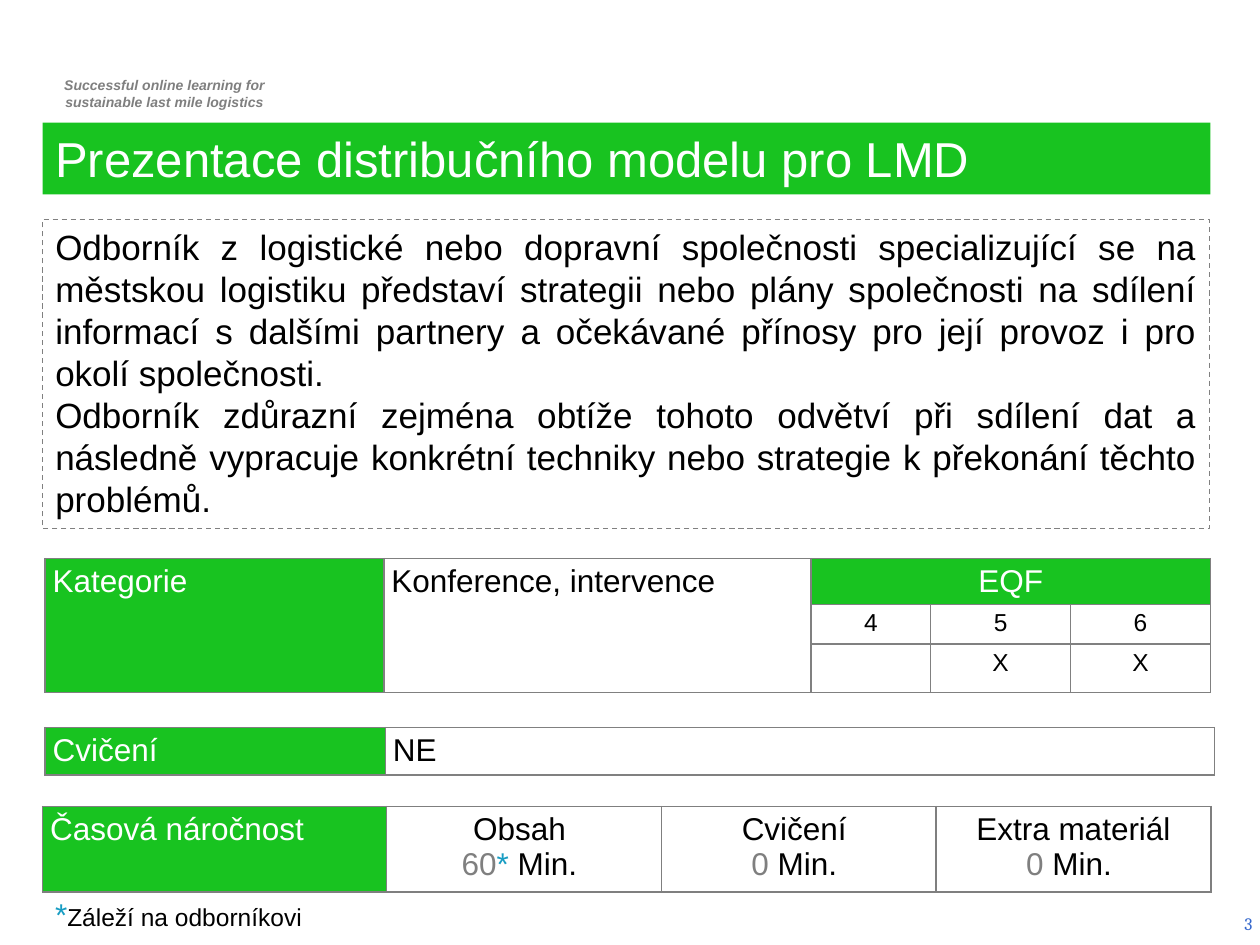
from lxml import etree
from pptx import Presentation, util as u
from pptx.dml.color import RGBColor
from pptx.enum import dml, text
from pptx.oxml import ns

HUES = {"green": "18C320", "white": "FFFFFF", "black": "000000",
        "gray": "7F7F7F", "edge": "808080", "cyan": "189DC3", "blue": "3366CC"}
ALIGN = {"l": text.PP_ALIGN.LEFT, "c": text.PP_ALIGN.CENTER,
         "r": text.PP_ALIGN.RIGHT, "j": text.PP_ALIGN.JUSTIFY}


def hue(name):
    return RGBColor.from_string(HUES[name])


def put(obj, form):
    for key, val in form.items():
        setattr(obj, key, val)


def place(obj, box):
    put(obj, dict(zip(("left", "top", "width", "height"), map(u.Cm, box))))


class Deck:
    face = "Arial"

    def __init__(self):
        self.prs = Presentation()
        put(self.prs, {"slide_width": u.Cm(25.4), "slide_height": u.Cm(19.05)})
        self.page = self.prs.slides.add_slide(self.prs.slide_layouts[1])

    def say(self, frame, paras, align="l", size=18, color="black", **font):
        for i, runs in enumerate(paras):
            para = frame.paragraphs[0] if i == 0 else frame.add_paragraph()
            put(para, {"alignment": ALIGN[align], "space_before": u.Pt(0)})
            for part in [runs] if isinstance(runs, str) else runs:
                words, tint, pts = ((part, color, size) if isinstance(part, str)
                                    else (*part, size)[:3])
                run = para.add_run()
                run.text = words
                put(run.font, {"name": self.face, "size": u.Pt(pts), **font})
                run.font.color.rgb = hue(tint)

    def frame(self, shape, mid=False):
        anchor = text.MSO_ANCHOR.MIDDLE if mid else text.MSO_ANCHOR.TOP
        put(shape.text_frame, {"word_wrap": True, "vertical_anchor": anchor,
                               "auto_size": text.MSO_AUTO_SIZE.NONE})
        return shape.text_frame

    def title(self, box, words):
        shape = self.page.shapes.title
        place(shape, box)
        shape.fill.solid()
        shape.fill.fore_color.rgb = hue("green")
        self.say(self.frame(shape), [words], size=28, color="white")

    def body(self, box, paras):
        shape = self.page.placeholders[1]
        place(shape, box)
        put(shape.line, {"width": u.Pt(0.75), "dash_style": dml.MSO_LINE.DASH})
        shape.line.color.rgb = hue("edge")
        frame = self.frame(shape)
        self.say(frame, paras, "j", 20)
        for para in frame.paragraphs:
            props = para._p.get_or_add_pPr()
            props.set("marL", "0")
            props.set("indent", "0")
            etree.SubElement(props, ns.qn("a:buNone"))

    def label(self, box, paras, mid=False, **form):
        shape = self.page.shapes.add_textbox(*map(u.Cm, box))
        self.say(self.frame(shape, mid), paras, **form)

    def edge(self, cell, color, width):
        props = cell._tc.get_or_add_tcPr()
        for i, side in enumerate(("lnL", "lnR", "lnT", "lnB")):
            line = etree.Element(ns.qn("a:" + side), w=str(int(u.Pt(width))))
            fill = etree.SubElement(line, ns.qn("a:solidFill"))
            etree.SubElement(fill, ns.qn("a:srgbClr"), val=HUES[color])
            props.insert(i, line)

    def table(self, spot, cols, rows, cells, spans=(), color="edge", width=1):
        box = (*spot, sum(cols), sum(rows))
        grid = self.page.shapes.add_table(
            len(rows), len(cols), *map(u.Cm, box)).table
        put(grid, {"first_row": False, "horz_banding": False})
        for col, size in zip(grid.columns, cols):
            col.width = u.Cm(size)
        for row, size in zip(grid.rows, rows):
            row.height = u.Cm(size)
        for cell in grid.iter_cells():
            put(cell, {"margin_left": u.Cm(0.15), "margin_right": u.Cm(0.15),
                       "margin_top": u.Cm(0.1), "margin_bottom": u.Cm(0.1)})
            cell.fill.background()
            self.edge(cell, color, width)
        for start, end in spans:
            grid.cell(*start).merge(grid.cell(*end))
        for (row, col), (paras, form) in cells.items():
            cell = grid.cell(row, col)
            if form.get("color") == "white":
                cell.fill.solid()
                cell.fill.fore_color.rgb = hue("green")
            self.say(cell.text_frame, paras, **form)


def main():
    deck = Deck()
    deck.label((0.74, 1.42, 5.16, 0.94),
               ["Successful online learning for", "sustainable last mile logistics"],
               align="c", size=8, color="gray", bold=True, italic=True)
    deck.label((19.58, 18.11, 5.92, 1.02), ["3"], mid=True,
               align="r", size=10, color="blue", name="Cambria")
    deck.title((0.86, 2.47, 23.54, 1.45), "Prezentace distribučního modelu pro LMD")
    deck.body((0.86, 4.42, 23.52, 6.24), [
        "Odborník z logistické nebo dopravní společnosti specializující se na "
        "městskou logistiku představí strategii nebo plány společnosti na sdílení "
        "informací s dalšími partnery a očekávané přínosy pro její provoz i pro "
        "okolí společnosti.",
        "Odborník zdůrazní zejména obtíže tohoto odvětví při sdílení dat a "
        "následně vypracuje konkrétní techniky nebo strategie k překonání těchto "
        "problémů."])

    head = {"align": "j", "color": "white"}
    plain = {"align": "j"}
    mid = {"align": "c"}
    small = {"align": "c", "size": 14}
    cells = {(0, 0): (["Kategorie"], head),
             (0, 1): (["Konference, intervence"], plain),
             (0, 2): (["EQF"], {"align": "c", "color": "white"})}
    for col, level in enumerate("456", 2):
        cells[1, col] = ([level], small)
    for col in (3, 4):
        cells[2, col] = (["X"], small)
    deck.table((0.91, 11.26), (6.83, 8.61, 2.41, 2.82, 2.82), (0.93, 0.79, 0.94),
               cells, [((0, 0), (2, 0)), ((0, 1), (2, 1)), ((0, 2), (0, 4))])

    deck.table((0.91, 14.67), (6.86, 16.71), (0.95,),
               {(0, 0): (["Cvičení"], head), (0, 1): (["NE"], plain)})

    cells = {(0, 0): (["Časová náročnost"], head)}
    times = (("Obsah ", [("60", "gray"), ("* ", "cyan")]),
             ("Cvičení ", [("0 ", "gray")]),
             ("Extra materiál", [("0 ", "gray")]))
    for col, (name, count) in enumerate(times, 1):
        cells[0, col] = ([name, count + ["Min. "]], mid)
    deck.table((0.86, 16.26), (6.93, 5.54, 5.54, 5.54), (1.72,), cells,
               color="gray", width=0.91)

    deck.label((0.86, 17.91, 11.28, 1.02),
               [[("*", "cyan", 18), "Záleží na odborníkovi"]], size=14)
    deck.prs.save("out.pptx")


if __name__ == "__main__":
    main()
